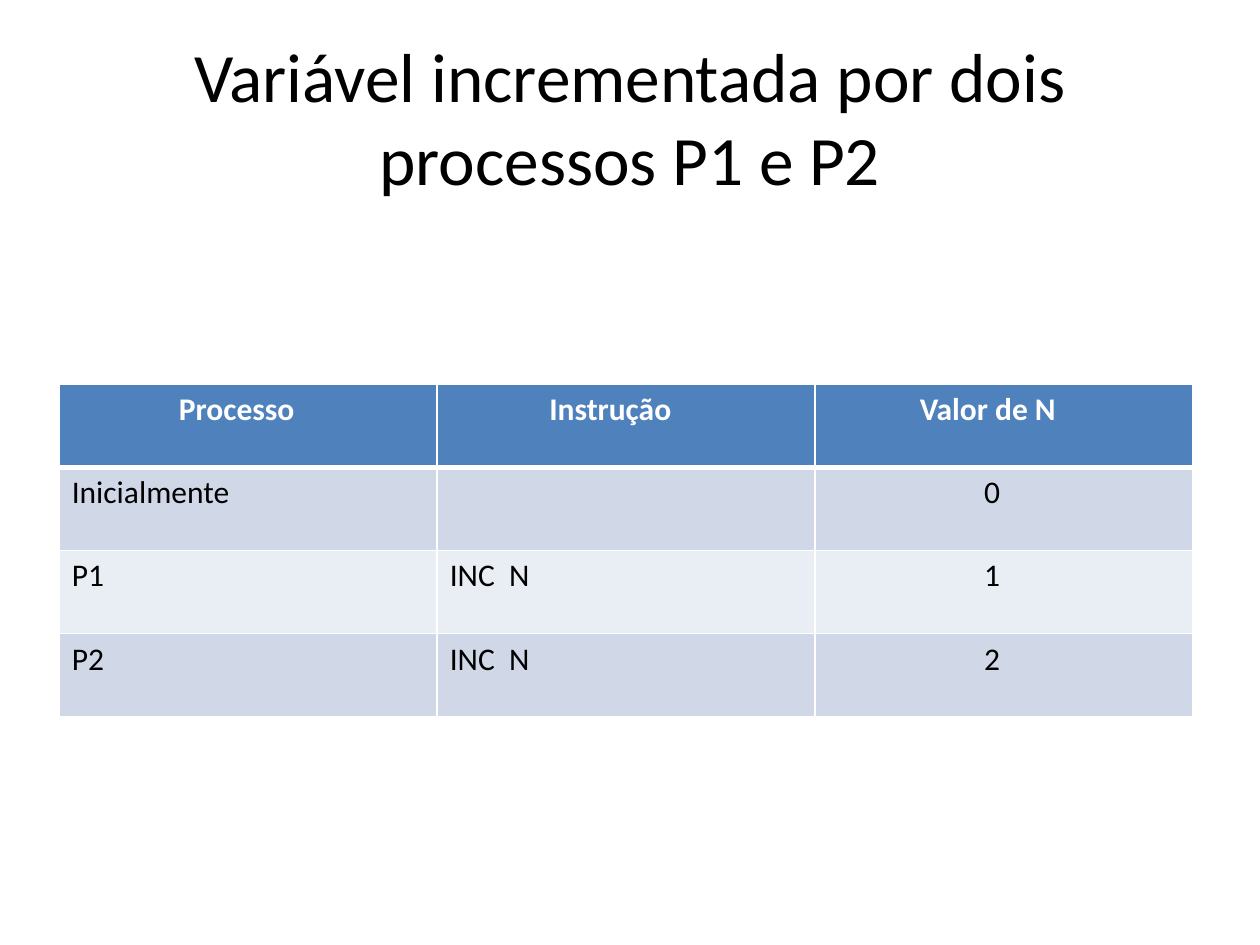
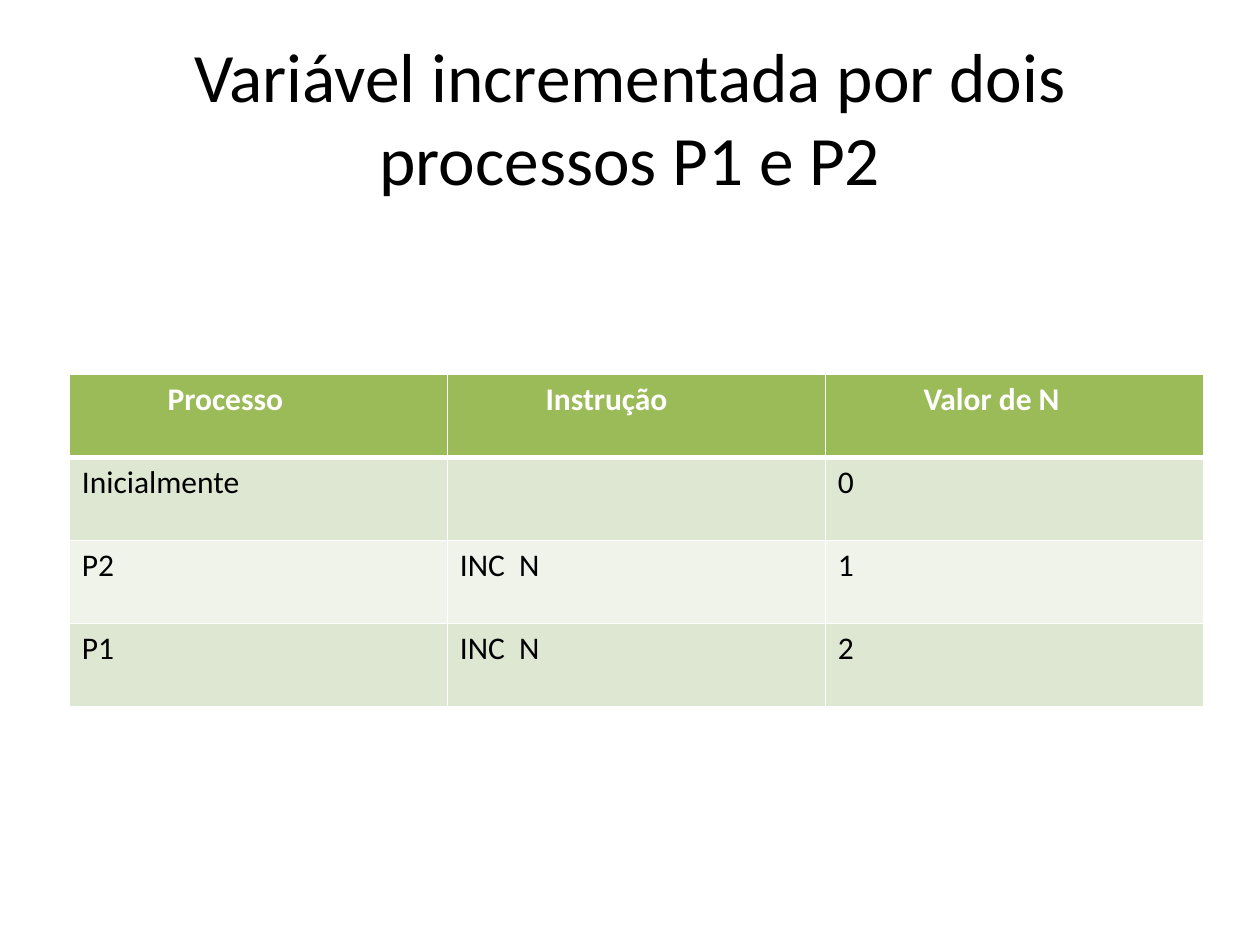
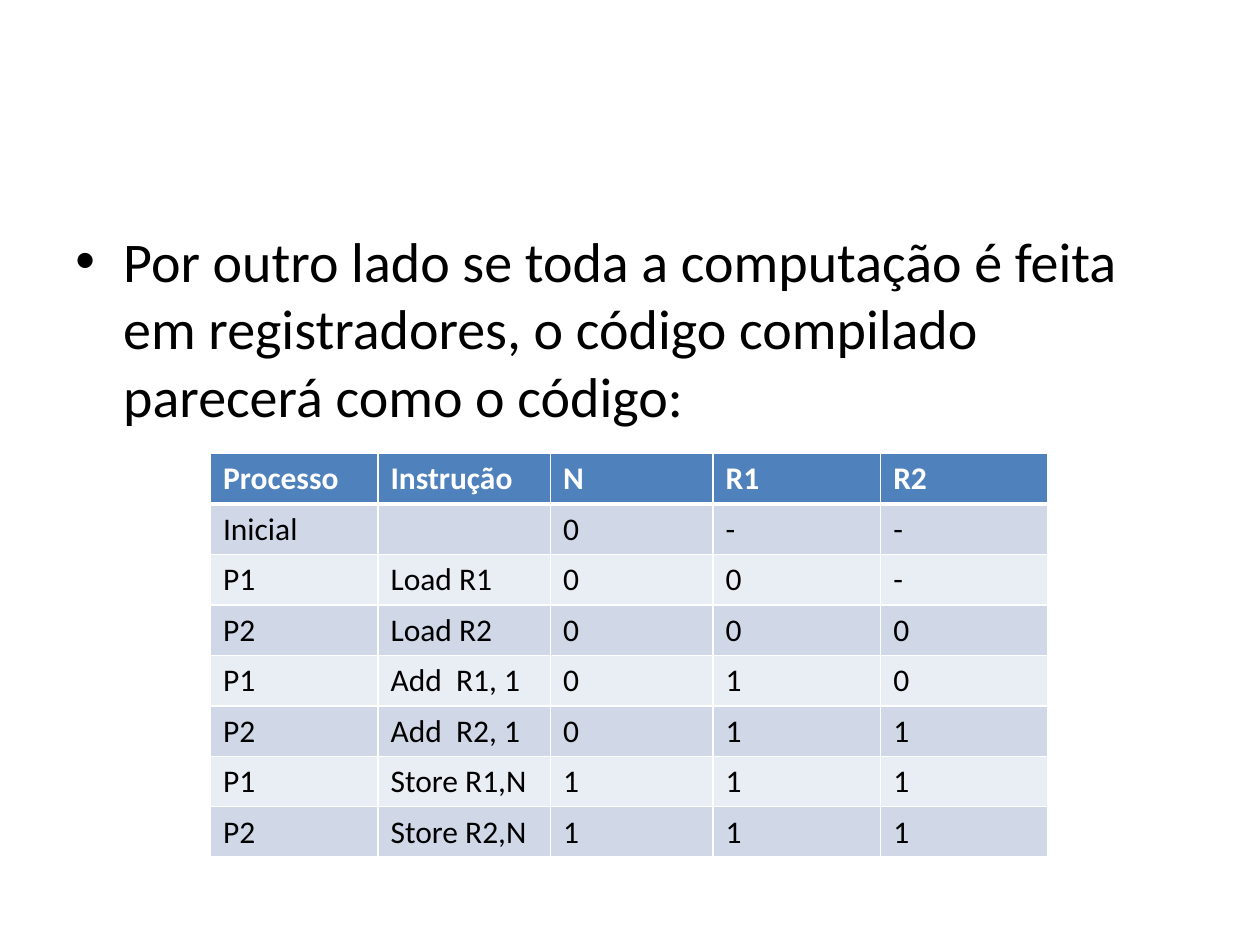
from lxml import etree
from pptx import Presentation
from pptx import util as u
from pptx.dml.color import RGBColor
from pptx.enum import text
from pptx.oxml import ns

COLORS = {
    "text": "000000",
    "white": "FFFFFF",
    "blue": "4F81BD",
    "blue_band": "D0D8E8",
    "blue_pale": "E9EDF4",
    "green": "9BBB59",
    "green_band": "DEE7D1",
    "green_pale": "EFF3EA",
}
FONT = "Calibri"
CELL_INSET = 0.1
TITLE = "Variável incrementada por dois processos P1 e P2"
HEADER = ["Processo", "Instrução", "Valor de N"]


class Slides:
    def __init__(self):
        self.deck = Presentation()
        self.deck.slide_width = u.Inches(10)
        self.deck.slide_height = u.Inches(7.5)
        self.page = None

    def new_page(self):
        self.page = self.deck.slides.add_slide(self.deck.slide_layouts[6])

    def span(self, para, words, size, color="text", bold=False):
        span = para.add_run()
        span.text = words
        span.font.name = FONT
        span.font.size = u.Pt(size)
        span.font.bold = bold
        span.font.color.rgb = RGBColor.from_string(COLORS[color])

    def text_box(self, left, top, width, height, words, size):
        box = self.page.shapes.add_textbox(*map(u.Inches, (left, top, width, height)))
        box.text_frame.word_wrap = True
        para = box.text_frame.paragraphs[0]
        self.span(para, words, size)
        return box.text_frame, para

    def title(self, words):
        frame, para = self.text_box(0.5, 0.3, 9, 1.25, words, 39.6)
        frame.vertical_anchor = text.MSO_ANCHOR.MIDDLE
        para.alignment = text.PP_ALIGN.CENTER

    def bullet(self, words):
        frame, para = self.text_box(0.5, 1.75, 9, 4.95, words, 32)
        props = para._p.get_or_add_pPr()
        props.set("marL", str(u.Inches(0.38)))
        props.set("indent", str(u.Inches(-0.38)))
        etree.SubElement(props, ns.qn("a:buFont"), typeface="Arial")
        etree.SubElement(props, ns.qn("a:buChar"), char="•")

    def border(self, cell, side, points):
        line = etree.SubElement(
            cell._tc.get_or_add_tcPr(), ns.qn(f"a:ln{side}"), w=str(u.Pt(points))
        )
        fill = etree.SubElement(line, ns.qn("a:solidFill"))
        etree.SubElement(fill, ns.qn("a:srgbClr"), val=COLORS["white"])

    def table(self, left, top, widths, row_height, rows, hue,
              header_insets=None, body_insets=None):
        plain = [CELL_INSET] * len(widths)
        table = self.page.shapes.add_table(
            len(rows), len(widths), u.Inches(left), u.Inches(top),
            u.Inches(sum(widths)), u.Inches(row_height * len(rows)),
        ).table
        for column, width in zip(table.columns, widths):
            column.width = u.Inches(width)
        for r, row in enumerate(rows):
            table.rows[r].height = u.Inches(row_height)
            is_header = r == 0
            insets = (header_insets if is_header else body_insets) or plain
            fill = hue if is_header else f"{hue}_{'band' if r % 2 else 'pale'}"
            for c, words in enumerate(row):
                cell = table.cell(r, c)
                cell.margin_left = u.Inches(insets[c])
                for side in "LRTB":
                    thick = (side == "B" and r == 0) or (side == "T" and r == 1)
                    self.border(cell, side, 3 if thick else 1)
                cell.fill.solid()
                cell.fill.fore_color.rgb = RGBColor.from_string(COLORS[fill])
                if words:
                    color = "white" if is_header else "text"
                    self.span(cell.text_frame.paragraphs[0], words, 18, color, is_header)


def main():
    slides = Slides()

    slides.new_page()
    slides.title(TITLE)
    slides.table(
        0.47, 3.05, [3, 3, 3], 0.66,
        [HEADER,
         ["Inicialmente", "", "0"],
         ["P1", "INC  N", "1"],
         ["P2", "INC  N", "2"]],
        "blue", [0.95, 0.89, 0.83], [CELL_INSET, CELL_INSET, 1.34],
    )

    slides.new_page()
    slides.title(TITLE)
    slides.table(
        0.55, 2.97, [3, 3, 3], 0.66,
        [HEADER,
         ["Inicialmente", "", "0"],
         ["P2", "INC  N", "1"],
         ["P1", "INC  N", "2"]],
        "green", [0.78] * 3,
    )

    slides.new_page()
    slides.bullet(
        "Por outro lado se toda a computação é feita em registradores, "
        "o código compilado parecerá como o código:"
    )
    slides.table(
        1.67, 3.6, [1.33, 1.37, 1.29, 1.33, 1.33], 0.4,
        [["Processo", "Instrução", "N", "R1", "R2"],
         ["Inicial", "", "0", "-", "-"],
         ["P1", "Load R1", "0", "0", "-"],
         ["P2", "Load R2", "0", "0", "0"],
         ["P1", "Add  R1, 1", "0", "1", "0"],
         ["P2", "Add  R2, 1", "0", "1", "1"],
         ["P1", "Store R1,N", "1", "1", "1"],
         ["P2", "Store R2,N", "1", "1", "1"]],
        "blue",
    )

    slides.deck.save("out.pptx")


if __name__ == "__main__":
    main()
